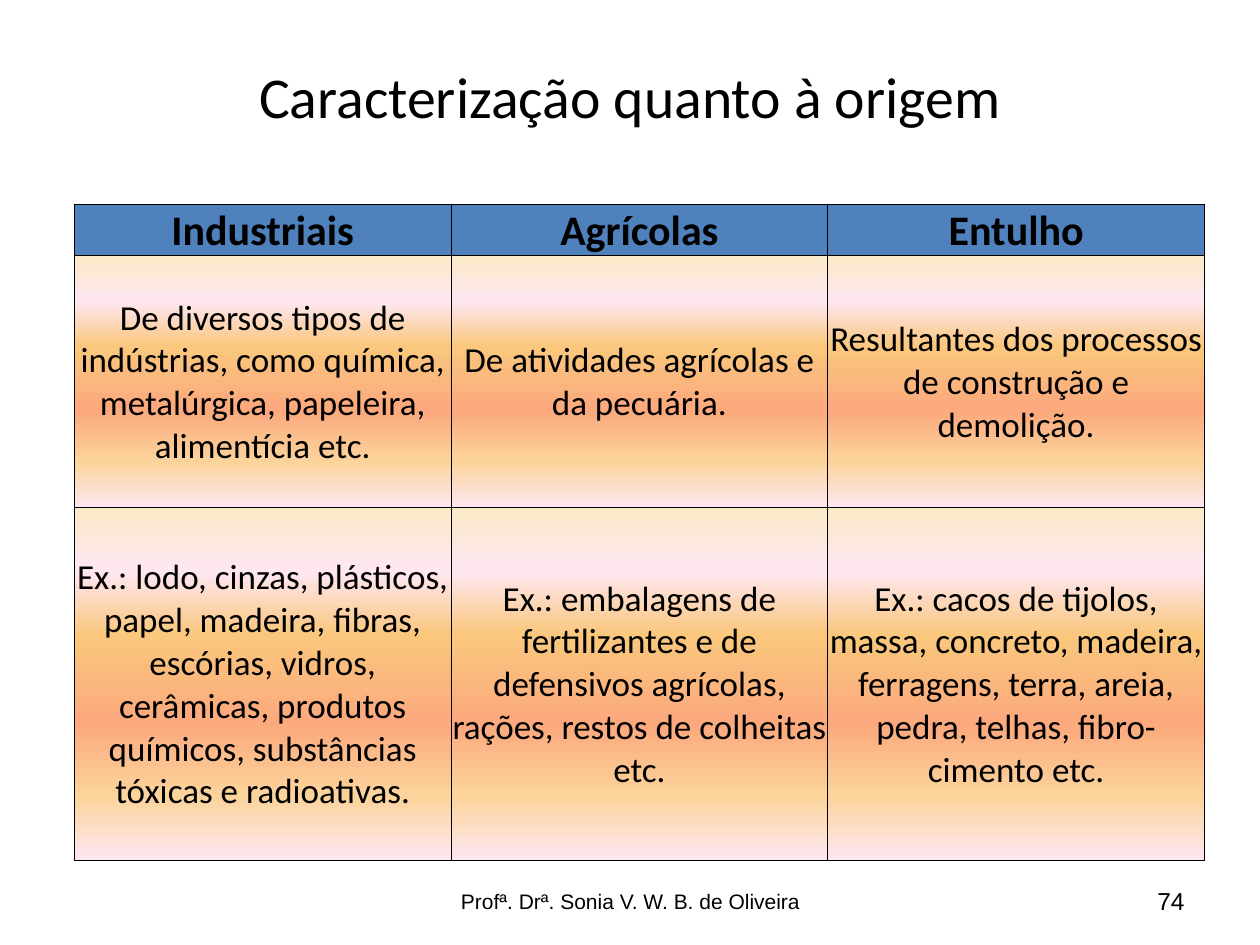
from dataclasses import dataclass

from lxml import etree
from pptx import Presentation
from pptx.dml.color import RGBColor
from pptx.enum.text import MSO_ANCHOR, PP_ALIGN
from pptx.oxml.ns import qn
from pptx.util import Inches, Pt

CENTER, RIGHT = PP_ALIGN.CENTER, PP_ALIGN.RIGHT
MIDDLE, BOTTOM = MSO_ANCHOR.MIDDLE, MSO_ANCHOR.BOTTOM

BLACK = RGBColor(0x00, 0x00, 0x00)
HEADER_BLUE = RGBColor(0x4F, 0x81, 0xBD)
CREAM = RGBColor(0xFB, 0xEA, 0xC7)
PINK = RGBColor(0xFE, 0xE7, 0xF2)
AMBER = RGBColor(0xFA, 0xC7, 0x7D)
SALMON = RGBColor(0xFB, 0xA9, 0x7D)
SAND = RGBColor(0xFB, 0xD4, 0x9C)
BODY_GRADIENT = [(0, CREAM), (18, PINK), (36, AMBER), (61, SALMON), (82, SAND), (100, PINK)]

COL_WIDTH = 2.99
ROW_HEIGHTS = [0.41, 2, 2.8]
CELL_FORMAT = {
    "margin_left": Inches(0.01),
    "margin_top": Inches(0.01),
    "margin_right": Inches(0.01),
    "margin_bottom": 0,
}
ROWS = [
    ["Industriais", "Agrícolas", "Entulho"],
    [
        "De diversos tipos de indústrias, como química, metalúrgica, papeleira, alimentícia etc.",
        "De atividades agrícolas e da pecuária.",
        "Resultantes dos processos de construção e demolição.",
    ],
    [
        "Ex.: lodo, cinzas, plásticos, papel, madeira, fibras, escórias, vidros, cerâmicas, "
        "produtos químicos, substâncias tóxicas e radioativas.",
        "Ex.: embalagens de fertilizantes e de defensivos agrícolas, rações, restos de colheitas etc.",
        "Ex.: cacos de tijolos, massa, concreto, madeira, ferragens, terra, areia, pedra, telhas, "
        "fibro-cimento etc.",
    ],
]


@dataclass
class Label:
    text: str
    left: float
    top: float
    width: float
    height: float
    size: int
    font: str
    align: PP_ALIGN = CENTER


LABELS = [
    Label("Caracterização quanto à origem", 0.5, 0.13, 9, 1.25, 33, "Calibri"),
    Label("Profª. Drª. Sonia V. W. B. de Oliveira", 3.42, 6.95, 3.17, 0.4, 12, "Arial"),
    Label("74", 7.17, 6.95, 2.33, 0.4, 14, "Arial", RIGHT),
]


def write_text(tf, text: str, size: int, font: str, align: PP_ALIGN, bold: bool = False) -> None:
    tf.word_wrap = True
    p = tf.paragraphs[0]
    p.alignment = align
    r = p.add_run()
    r.text = text
    r.font.color.rgb = BLACK
    for name, value in {"size": Pt(size), "name": font, "bold": bold}.items():
        setattr(r.font, name, value)


def add_label(slide, label: Label) -> None:
    box = (label.left, label.top, label.width, label.height)
    tf = slide.shapes.add_textbox(*map(Inches, box)).text_frame
    tf.vertical_anchor = MIDDLE
    write_text(tf, label.text, label.size, label.font, label.align)


def add_color(parent, color: RGBColor) -> None:
    etree.SubElement(parent, qn("a:srgbClr"), val=str(color))


def add_borders(cell) -> None:
    tc_pr = cell._tc.get_or_add_tcPr()
    for side in ("a:lnL", "a:lnR", "a:lnT", "a:lnB"):
        ln = etree.SubElement(tc_pr, qn(side), w=str(Pt(0.5)))
        add_color(etree.SubElement(ln, qn("a:solidFill")), BLACK)


def fill_gradient(cell) -> None:
    """Fill the cell from top to bottom; must follow add_borders."""
    grad = etree.SubElement(cell._tc.get_or_add_tcPr(), qn("a:gradFill"), rotWithShape="1")
    stops = etree.SubElement(grad, qn("a:gsLst"))
    for percent, color in BODY_GRADIENT:
        add_color(etree.SubElement(stops, qn("a:gs"), pos=str(percent * 1000)), color)
    etree.SubElement(grad, qn("a:lin"), ang=str(90 * 60000), scaled="0")


def format_cell(cell, text: str, header: bool) -> None:
    for name, value in CELL_FORMAT.items():
        setattr(cell, name, value)
    cell.vertical_anchor = BOTTOM if header else MIDDLE
    write_text(cell.text_frame, text, 24 if header else 20, "Calibri", CENTER, header)
    add_borders(cell)
    if header:
        cell.fill.solid()
        cell.fill.fore_color.rgb = HEADER_BLUE
    else:
        fill_gradient(cell)


def add_waste_table(slide) -> None:
    n_cols = len(ROWS[0])
    table = slide.shapes.add_table(
        len(ROWS), n_cols, Inches(0.59), Inches(1.62),
        Inches(COL_WIDTH * n_cols), Inches(sum(ROW_HEIGHTS)),
    ).table
    table.horz_banding = False
    for column in table.columns:
        column.width = Inches(COL_WIDTH)
    for i, (height, texts) in enumerate(zip(ROW_HEIGHTS, ROWS)):
        table.rows[i].height = Inches(height)
        for j, text in enumerate(texts):
            format_cell(table.cell(i, j), text, header=i == 0)


def main() -> None:
    prs = Presentation()
    prs.slide_width, prs.slide_height = Inches(10), Inches(7.5)
    slide = prs.slides.add_slide(prs.slide_layouts[6])
    for label in LABELS:
        add_label(slide, label)
    add_waste_table(slide)
    prs.save("out.pptx")


if __name__ == "__main__":
    main()
